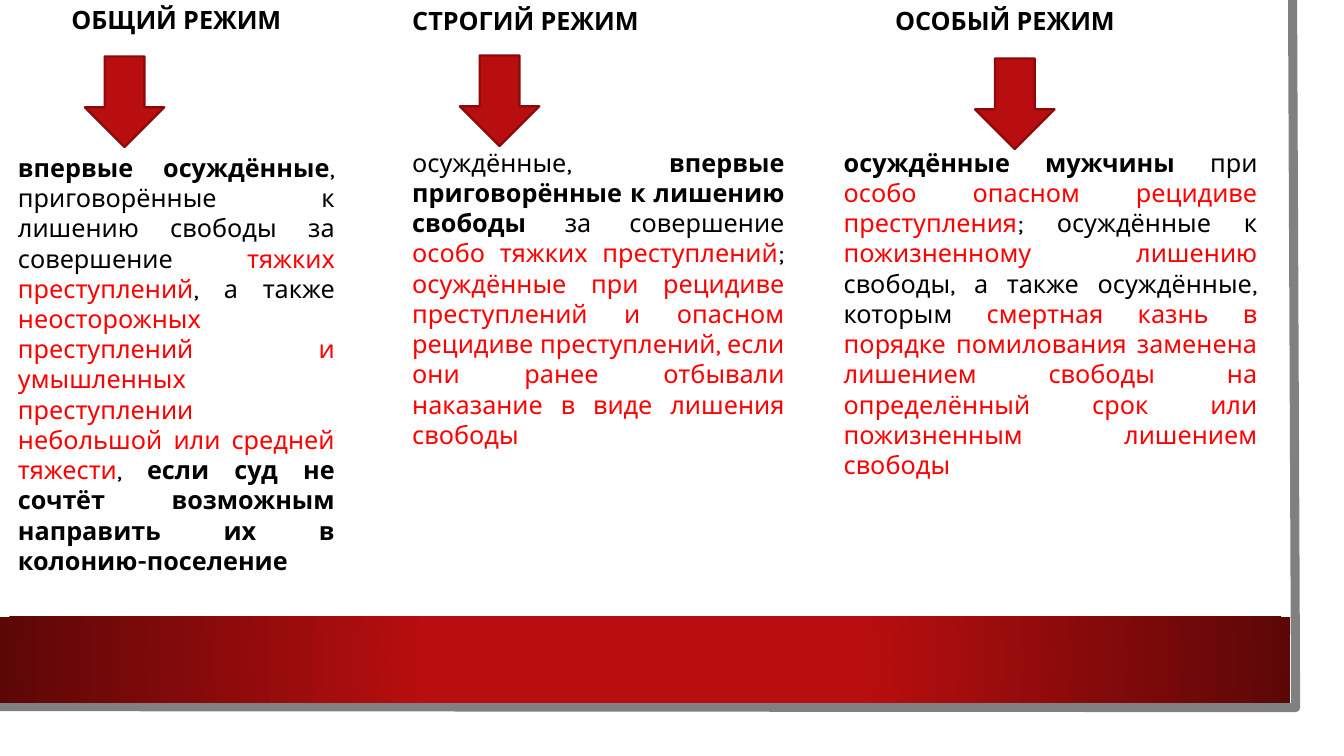
from lxml import etree
from pptx import Presentation
from pptx.dml.color import RGBColor
from pptx.enum.shapes import MSO_SHAPE as SHAPE
from pptx.enum.text import PP_ALIGN as ALIGN
from pptx.oxml import parse_xml
from pptx.oxml.ns import nsdecls, qn
from pptx.util import Inches, Pt

COLORS = {"black": "000000", "accent": "FF0000", "red": "B80E0F",
          "dark_red": "5C0707", "outline": "880A0B", "gray": "808080"}


def rgb(name):
    return RGBColor.from_string(COLORS[name])


def add_text(slide, runs, x, y, w, h, size=18, font="Karla", align=ALIGN.LEFT):
    """Each run is (text, style); style is plain, bold or accent."""
    tf = slide.shapes.add_textbox(Inches(x), Inches(y), Inches(w), Inches(h)).text_frame
    tf.word_wrap = True
    p = tf.paragraphs[0]
    p.alignment = align
    for text, style in runs:
        r = p.add_run()
        r.text = text
        r.font.name = font
        r.font.size = Pt(size)
        r.font.bold = style == "bold"
        r.font.color.rgb = rgb("accent" if style == "accent" else "black")


prs = Presentation()
prs.slide_width, prs.slide_height = Inches(13.33), Inches(7.5)
s = prs.slides.add_slide(prs.slide_layouts[6])

# Gray page edge along the right and bottom
builder = s.shapes.build_freeform(Inches(12.82), 0, scale=1.0)
builder.add_line_segments([(Inches(12.85), Inches(7.02)),
                           (Inches(-0.03), Inches(7.01))], close=False)
edge = builder.convert_to_shape()
edge.shadow.inherit = False
edge.fill.background()
edge.line.color.rgb = rgb("gray")
edge.line.width = Pt(6.5)

# Red band, darker towards its ends
band = s.shapes.add_shape(SHAPE.RECTANGLE, 0, Inches(6.12), Inches(12.8), Inches(0.85))
band.shadow.inherit = False
band.line.fill.background()
grad = parse_xml(f'<a:gradFill {nsdecls("a")} rotWithShape="1"><a:gsLst/></a:gradFill>')
for pos, name in ((34, "red"), (100, "dark_red")):
    stop = etree.SubElement(grad[0], qn("a:gs"), pos=str(pos * 1000))
    etree.SubElement(stop, qn("a:srgbClr"), val=COLORS[name])
path = etree.SubElement(grad, qn("a:path"), path="circle")
etree.SubElement(path, qn("a:fillToRect"), l="50000", t="50000", r="50000", b="50000")
band._element.spPr.find(qn("a:prstGeom")).addnext(grad)

# Columns: heading, heading box, arrow corner, body box, body runs
columns = [
    ("ОБЩИЙ РЕЖИМ", (0.61, -0.01, 3.94, 0.4), (0.84, 0.56), (0.08, 1.46, 3.34, 4.95), [
        ("впервые осуждённые", "bold"),
        (", приговорённые к лишению свободы за совершение ", "plain"),
        ("тяжких преступлений", "accent"),
        (", а также ", "plain"),
        ("неосторожных преступлений и умышленных преступлении "
         "небольшой или средней тяжести", "accent"),
        (", ", "plain"),
        ("если суд не сочтёт возможным направить их в колонию-поселение", "bold")]),
    ("СТРОГИЙ РЕЖИМ", (3.99, 0, 4.42, 0.4), (4.56, 0.55), (3.99, 1.41, 3.89, 2.83), [
        ("осуждённые, ", "plain"),
        ("впервые приговорённые к лишению свободы ", "bold"),
        ("за совершение ", "plain"),
        ("особо тяжких преступлений", "accent"),
        ("; ", "plain"),
        ("осуждённые при рецидиве преступлений и опасном рецидиве преступлений, "
         "если они ранее отбывали наказание в виде лишения свободы", "accent")]),
    ("ОСОБЫЙ РЕЖИМ", (8.78, 0, 3.24, 0.4), (9.67, 0.58), (8.27, 1.41, 4.3, 3.13), [
        ("осуждённые мужчины ", "bold"),
        ("при ", "plain"),
        ("особо опасном рецидиве преступления", "accent"),
        ("; осуждённые к ", "plain"),
        ("пожизненному лишению ", "accent"),
        ("свободы, а также осуждённые, которым ", "plain"),
        ("смертная казнь в порядке помилования заменена лишением свободы "
         "на определённый срок или пожизненным лишением свободы", "accent")]),
]
for heading, heading_box, (x, y), body_box, runs in columns:
    add_text(s, [(heading, "bold")], *heading_box)
    arrow = s.shapes.add_shape(SHAPE.DOWN_ARROW, Inches(x), Inches(y), Inches(0.79), Inches(0.9))
    arrow.shadow.inherit = False
    arrow.fill.solid()
    arrow.fill.fore_color.rgb = rgb("red")
    arrow.line.color.rgb = rgb("outline")
    arrow.line.width = Pt(1.5)
    add_text(s, runs, *body_box, align=ALIGN.JUSTIFY)

prs.save("out.pptx")
